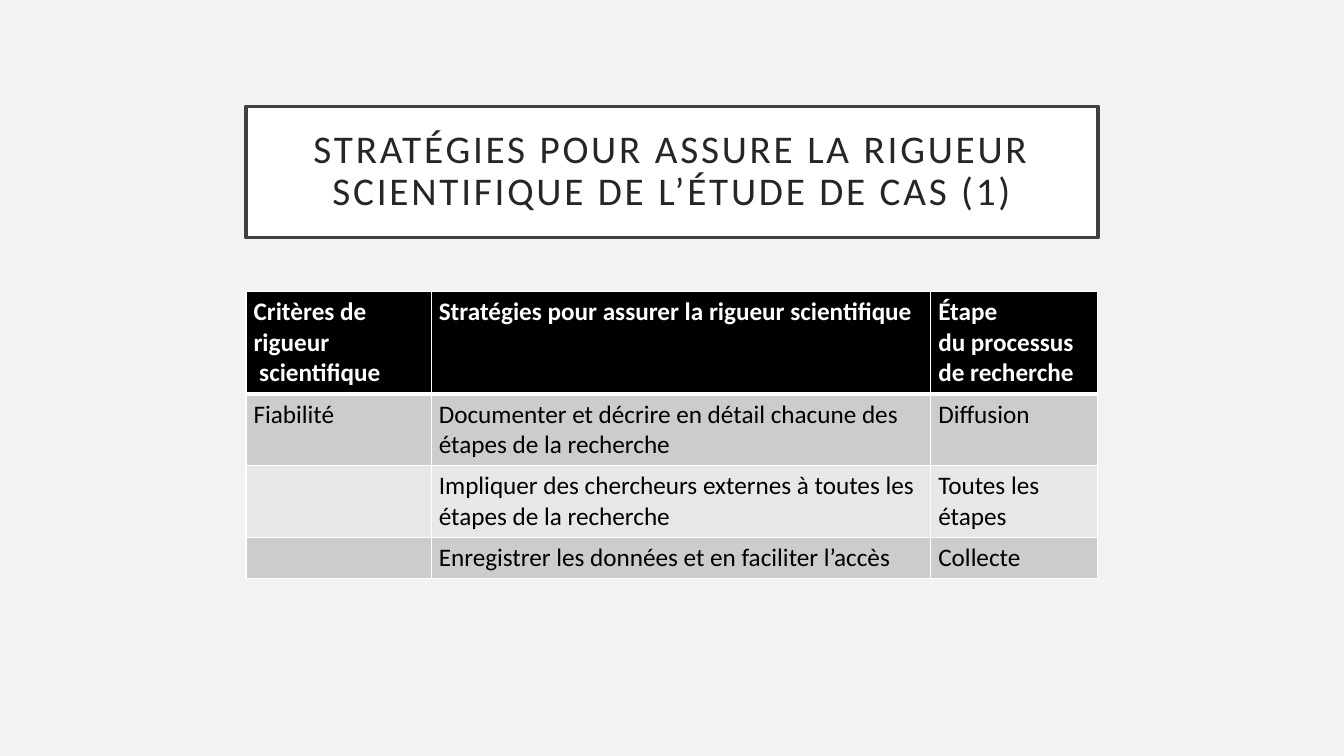
from dataclasses import dataclass

from lxml.etree import SubElement
from pptx import Presentation
from pptx.dml.color import RGBColor
from pptx.enum.shapes import MSO_SHAPE
from pptx.enum.text import MSO_ANCHOR, PP_ALIGN
from pptx.oxml.ns import qn
from pptx.util import Cm, Pt


@dataclass(frozen=True)
class Theme:
    """Colours, font and sizes of the slide."""
    font: str = "Calibri"
    title_size: int = 28
    table_size: int = 18
    background: str = "F2F2F2"
    white: str = "FFFFFF"
    black: str = "000000"
    frame: str = "404040"
    title: str = "262626"
    bands: tuple = ("CCCCCC", "E7E7E7")


THEME = Theme()

TITLE = "STRATÉGIES POUR ASSURE LA RIGUEUR SCIENTIFIQUE DE L’ÉTUDE DE CAS (1)"
CRITERIA = [
    (["Critères de rigueur", " scientifique"],
     ["Stratégies pour assurer la rigueur scientifique"],
     ["Étape", "du processus", "de recherche"]),
    (["Fiabilité"],
     ["Documenter et décrire en détail chacune des étapes de la recherche"],
     ["Diffusion"]),
    ([],
     ["Impliquer des chercheurs externes à toutes les étapes de la recherche"],
     ["Toutes les étapes"]),
    ([], ["Enregistrer les données et en faciliter l’accès"], ["Collecte"]),
]
COLUMN_SHARES = (1.84, 4.96, 1.66)
ROW_HEIGHTS = (2.56, 1.8, 1.8, 1.03)


def paint(fill, colour):
    """Give a fill one solid colour."""
    fill.solid()
    fill.fore_color.rgb = RGBColor.from_string(colour)


def add_run(paragraph, text, size, colour, bold=False):
    """Add one styled run to a paragraph."""
    run = paragraph.add_run()
    run.text = text
    run.font.name = THEME.font
    run.font.size = Pt(size)
    run.font.bold = bold
    run.font.color.rgb = RGBColor.from_string(colour)
    return run


def add_title(slide, left, top, width, height):
    """Draw the framed title in its box."""
    banner = slide.shapes.add_shape(MSO_SHAPE.RECTANGLE, left, top, width, height)
    banner.shadow.inherit = False
    paint(banner.fill, THEME.white)
    banner.line.color.rgb = RGBColor.from_string(THEME.frame)
    banner.line.width = Pt(2.5)
    frame = banner.text_frame
    frame.word_wrap = True
    frame.vertical_anchor = MSO_ANCHOR.MIDDLE
    frame.margin_left = frame.margin_right = Cm(0.51)
    frame.margin_top = frame.margin_bottom = Cm(0.51)
    heading = frame.paragraphs[0]
    heading.alignment = PP_ALIGN.CENTER
    heading.line_spacing = 0.9
    run = add_run(heading, TITLE, THEME.title_size, THEME.title)
    run.font._element.set("spc", "200")


def set_borders(cell, **widths):
    """Draw white cell borders with the given widths in points."""
    properties = cell._tc.get_or_add_tcPr()
    for side in "LRTB":
        border = SubElement(properties, qn(f"a:ln{side}"), w=str(Pt(widths.get(side, 1))))
        solid = SubElement(border, qn("a:solidFill"))
        SubElement(solid, qn("a:srgbClr"), val=THEME.white)


def fill_cell(cell, lines, row):
    """Style one cell by its row and write its lines."""
    header = row == 0
    rules = {0: {"B": 3}, 1: {"T": 3}}
    set_borders(cell, **rules.get(row, {}))
    paint(cell.fill, THEME.black if header else THEME.bands[(row - 1) % 2])
    cell.margin_left = cell.margin_right = Cm(0.19)
    cell.margin_top = cell.margin_bottom = Cm(0.13)
    frame = cell.text_frame
    for index, line in enumerate(lines):
        paragraph = frame.add_paragraph() if index else frame.paragraphs[0]
        add_run(paragraph, line, THEME.table_size,
                THEME.white if header else THEME.black, header)


def add_criteria_table(slide, left, top, width):
    """Draw the table of rigour criteria across the given width."""
    height = Cm(sum(ROW_HEIGHTS))
    table = slide.shapes.add_table(
        len(CRITERIA), len(COLUMN_SHARES), left, top, width, height).table
    for column, share in zip(table.columns, COLUMN_SHARES):
        column.width = int(width * share / sum(COLUMN_SHARES))
    for row, (entries, row_height) in enumerate(zip(CRITERIA, ROW_HEIGHTS)):
        table.rows[row].height = Cm(row_height)
        for column, lines in enumerate(entries):
            fill_cell(table.cell(row, column), lines, row)


def main():
    """Build and save the slide."""
    deck = Presentation()
    deck.slide_width, deck.slide_height = Cm(33.87), Cm(19.05)
    slide = deck.slides.add_slide(deck.slide_layouts[6])
    paint(slide.background.fill, THEME.background)
    width = Cm(21.47)
    left = (deck.slide_width - width) // 2
    add_title(slide, left, Cm(2.68), width, Cm(3.31))
    add_criteria_table(slide, left, Cm(7.34), width)
    deck.save("out.pptx")


if __name__ == "__main__":
    main()
